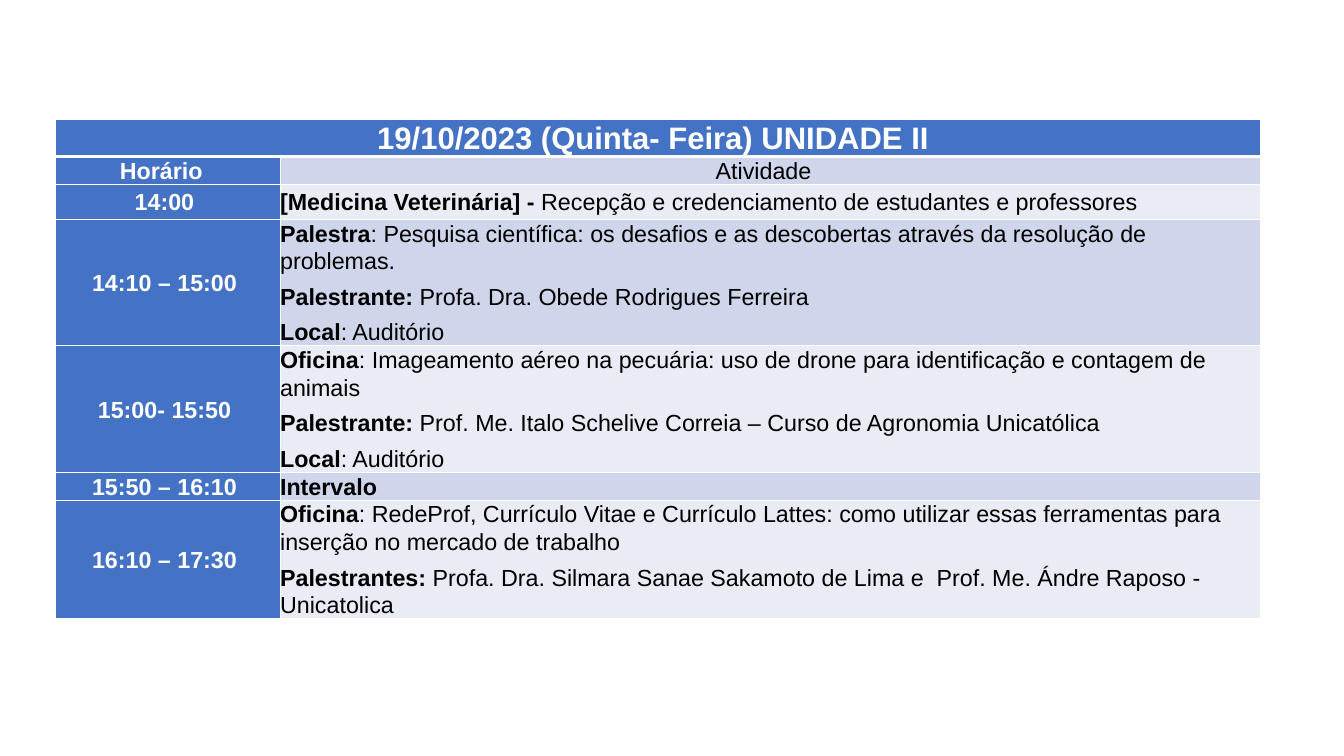
from lxml import etree
from pptx import Presentation
from pptx.dml import color as dml_color
from pptx.enum import text as text_enum
from pptx.oxml import ns
from pptx.util import Pt

BLUE = "4472C4"
BANDS = ["CFD5EA", "E9EBF5"]
WHITE = "FFFFFF"
BLACK = "000000"
LEFT = text_enum.PP_ALIGN.LEFT
CENTER = text_enum.PP_ALIGN.CENTER
JUSTIFY = text_enum.PP_ALIGN.JUSTIFY
TOP = text_enum.MSO_ANCHOR.TOP
MIDDLE = text_enum.MSO_ANCHOR.MIDDLE

TITLE = "19/10/2023 (Quinta- Feira) UNIDADE II "
COLUMN_WIDTHS = [232, 1011]
ROW_HEIGHTS = [36, 26, 36, 128, 128, 26, 120]

SCHEDULE = [
    ("Horário  ", [("", "Atividade  ")]),
    ("14:00 ", [("[Medicina Veterinária] - ", "Recepção e credenciamento de estudantes e professores")]),
    ("14:10 – 15:00 ", [
        ("Palestra", ": Pesquisa científica: os desafios e as descobertas através da resolução de problemas.  "),
        ("Palestrante: ", "Profa. Dra. Obede Rodrigues Ferreira "),
        ("Local", ": Auditório  "),
    ]),
    ("15:00- 15:50 ", [
        ("Oficina", ": Imageamento aéreo na pecuária: uso de drone para identificação e contagem de animais "),
        ("Palestrante: ", "Prof. Me. Italo Schelive Correia – Curso de Agronomia Unicatólica "),
        ("Local", ": Auditório "),
    ]),
    ("15:50 – 16:10 ", [("Intervalo  ", "")]),
    ("16:10 – 17:30 ", [
        ("Oficina", ": RedeProf, Currículo Vitae e Currículo Lattes: como utilizar essas ferramentas para inserção no mercado de trabalho  "),
        ("Palestrantes: ", "Profa. Dra. Silmara Sanae Sakamoto de Lima e  Prof. Me. Ándre Raposo - Unicatolica "),
    ]),
]


def rgb(value):
    return dml_color.RGBColor.from_string(value)


def add_text(paragraph, text, size=24, color=BLACK, bold=False):
    run = paragraph.add_run()
    run.text = text
    run.font.name = "Arial"
    run.font.size = Pt(size)
    run.font.bold = bold
    run.font.color.rgb = rgb(color)


def add_border(cell, side, width):
    properties = cell._tc.get_or_add_tcPr()
    line = etree.SubElement(properties, ns.qn(f"a:ln{side}"), w=str(Pt(width)))
    fill = etree.SubElement(line, ns.qn("a:solidFill"))
    etree.SubElement(fill, ns.qn("a:srgbClr"), val=WHITE)


def format_cell(cell, fill, anchor=MIDDLE, top=1, bottom=1):
    for side, width in zip("LRTB", (1, 1, top, bottom)):
        add_border(cell, side, width)
    cell.fill.solid()
    cell.fill.fore_color.rgb = rgb(fill)
    cell.margin_left = cell.margin_right = Pt(0)
    cell.margin_top = cell.margin_bottom = Pt(0)
    cell.vertical_anchor = anchor


def add_paragraph(cell, index, alignment):
    frame = cell.text_frame
    paragraph = frame.add_paragraph() if index else frame.paragraphs[0]
    paragraph.alignment = alignment
    paragraph.line_spacing = 1.07
    paragraph.space_after = Pt(8)
    return paragraph


def fill_title(table):
    title_cell = table.cell(0, 0)
    title_cell.merge(table.cell(0, 1))
    for column in range(2):
        format_cell(table.cell(0, column), BLUE, anchor=TOP, bottom=3)
    add_text(add_paragraph(title_cell, 0, CENTER), TITLE, size=32, color=WHITE, bold=True)


def fill_row(table, row, time, activity):
    is_header = row == 1
    anchor = TOP if is_header else MIDDLE
    top = 3 if is_header else 1
    alignment = {1: CENTER, 2: JUSTIFY}.get(row, LEFT)
    time_cell, activity_cell = table.cell(row, 0), table.cell(row, 1)
    format_cell(time_cell, BLUE, anchor=anchor, top=top)
    add_text(add_paragraph(time_cell, 0, CENTER), time, color=WHITE, bold=True)
    format_cell(activity_cell, BANDS[(row - 1) % 2], anchor=anchor, top=top)
    for index, (label, detail) in enumerate(activity):
        paragraph = add_paragraph(activity_cell, index, alignment)
        if label:
            add_text(paragraph, label, bold=True)
        if detail:
            add_text(paragraph, detail)


def add_schedule(slide):
    frame = slide.shapes.add_table(
        len(ROW_HEIGHTS), len(COLUMN_WIDTHS), Pt(57), Pt(123),
        Pt(sum(COLUMN_WIDTHS)), Pt(sum(ROW_HEIGHTS)))
    table = frame.table
    table.first_row = False
    table.horz_banding = False
    for column, width in zip(table.columns, COLUMN_WIDTHS):
        column.width = Pt(width)
    for row, height in zip(table.rows, ROW_HEIGHTS):
        row.height = Pt(height)
    fill_title(table)
    for row, (time, activity) in enumerate(SCHEDULE, start=1):
        fill_row(table, row, time, activity)


def main():
    presentation = Presentation()
    presentation.slide_width = Pt(1386.72)
    presentation.slide_height = Pt(779.76)
    slide = presentation.slides.add_slide(presentation.slide_layouts[6])
    add_schedule(slide)
    presentation.save("out.pptx")


if __name__ == "__main__":
    main()
